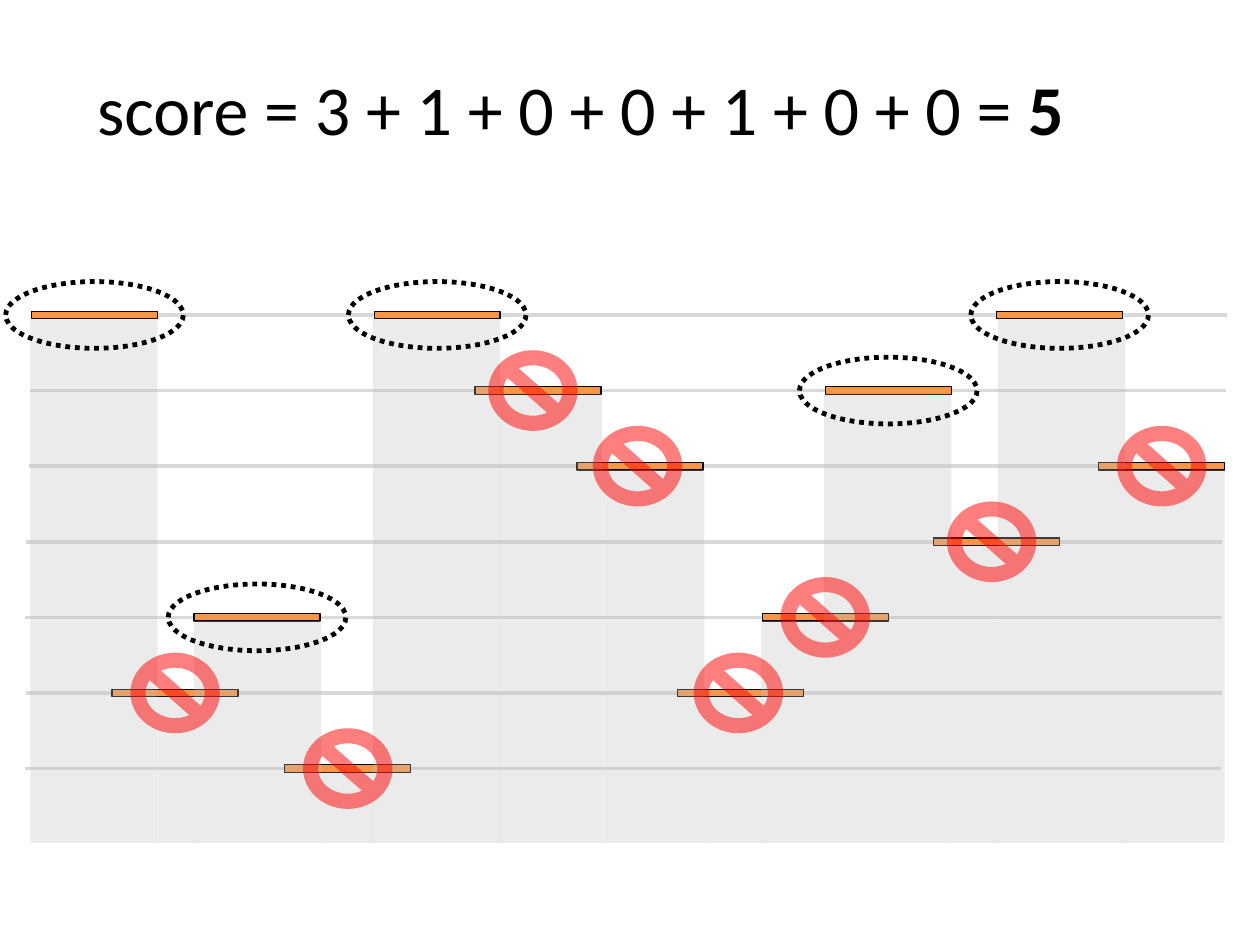
from dataclasses import dataclass
from itertools import pairwise

from lxml import etree
from pptx import Presentation
from pptx.dml.color import RGBColor
from pptx.enum.dml import MSO_LINE
from pptx.enum.shapes import MSO_CONNECTOR, MSO_SHAPE
from pptx.enum.text import MSO_ANCHOR, MSO_AUTO_SIZE, PP_ALIGN
from pptx.oxml.ns import qn
from pptx.util import Inches, Pt

STRAIGHT = MSO_CONNECTOR.STRAIGHT
RECTANGLE, OVAL, NO_SYMBOL = MSO_SHAPE.RECTANGLE, MSO_SHAPE.OVAL, MSO_SHAPE.NO_SYMBOL
DOTTED = MSO_LINE.ROUND_DOT
TITLE_ONLY = 5


@dataclass(frozen=True)
class Theme:
    font: str = "Calibri"
    title_size: float = 40
    ink: str = "000000"
    guide: str = "D9D9D9"
    bar: str = "F79646"
    shade: str = "BFBFBF"
    rejected: str = "FF0000"
    guide_width: float = 2
    bar_outline: float = 0.75
    ring_width: float = 2.75


@dataclass(frozen=True)
class Box:
    left: float
    top: float
    width: float
    height: float

    def inches(self):
        return [Inches(n) for n in (self.left, self.top, self.width, self.height)]


THEME = Theme()
TITLE_BOX = Box(0.67, 0.47, 9, 1.25)
CHART_BOX = Box(0.2, 2.5, 9.52, 4.19)

LEVEL_STEP = 0.6
GUIDE_LENGTH = 9.49
BAR_WIDTH, BAR_HEIGHT = 1, 0.06
RING_SIZE = (1.41, 0.53)
SIGN_SIZE = (0.71, 0.64)

# Offsets and edges are measured from the left side of the chart box.
GUIDE_OFFSETS = [0.05, 0.04, 0.03, 0.01, 0, 0.01, 0]
SKYLINE_EDGES = [0.04, 1.05, 1.34, 2.35, 2.76, 3.77, 4.58,
                 5.39, 5.84, 6.34, 7.35, 7.72, 8.73, 9.52]
SKYLINE_LEVELS = [0, 5, 4, 6, 0, 1, 2, 5, 4, 1, 3, 0, 2]
KEPT_BARS = [(0.05, 0), (2.77, 0), (7.71, 0), (6.35, 1), (1.34, 4)]
# Left, level and sideways shift of the sign from the bar's centre.
REJECTED_BARS = [(3.57, 1, -0.04), (8.52, 2, 0), (4.38, 2, -0.02), (7.21, 3, -0.04),
                 (5.85, 4, 0), (0.69, 5, 0), (5.18, 5, -0.02), (2.06, 6, 0)]


def color(value):
    return RGBColor.from_string(value)


def add_shape(page, kind, box, fill=None, alpha=None, line=None, width=0):
    shape = page.shapes.add_shape(kind, *box.inches())
    shape.shadow.inherit = False
    if fill:
        shape.fill.solid()
        shape.fill.fore_color.rgb = color(fill)
    else:
        shape.fill.background()
    if alpha is not None:
        tone = shape.fill._xPr.find(qn("a:solidFill"))[0]
        etree.SubElement(tone, qn("a:alpha"), val=str(alpha * 1000))
    if line:
        shape.line.color.rgb = color(line)
        shape.line.width = Pt(width)
    else:
        shape.line.fill.background()
    return shape


def centered(x, y, size):
    width, height = size
    return Box(x - width / 2, y - height / 2, width, height)


def level_y(box, level):
    return box.top + level * LEVEL_STEP


def write_score(page, box):
    title = page.shapes.title
    title.left, title.top, title.width, title.height = box.inches()
    frame = title.text_frame
    frame.word_wrap = True
    frame.auto_size = MSO_AUTO_SIZE.NONE
    frame.vertical_anchor = MSO_ANCHOR.TOP
    para = frame.paragraphs[0]
    para.alignment = PP_ALIGN.LEFT
    for text, bold in (("score = 3 + 1 + 0 + 0 + 1 + 0 + 0 = ", False), ("5", True)):
        span = para.add_run()
        span.text = text
        span.font.name = THEME.font
        span.font.size = Pt(THEME.title_size)
        span.font.bold = bold
        span.font.color.rgb = color(THEME.ink)


def draw_guides(page, box):
    for level, offset in enumerate(GUIDE_OFFSETS):
        left, y = box.left + offset, Inches(level_y(box, level))
        guide = page.shapes.add_connector(
            STRAIGHT, Inches(left), y, Inches(left + GUIDE_LENGTH), y)
        guide.line.color.rgb = color(THEME.guide)
        guide.line.width = Pt(THEME.guide_width)
        etree.SubElement(guide._element.spPr, qn("a:effectLst"))


def draw_bars(page, box):
    for left, level, *_ in KEPT_BARS + REJECTED_BARS:
        place = Box(box.left + left, level_y(box, level) - BAR_HEIGHT / 2,
                    BAR_WIDTH, BAR_HEIGHT)
        add_shape(page, RECTANGLE, place, THEME.bar,
                  line=THEME.ink, width=THEME.bar_outline)


def draw_skyline(page, box):
    """Shade the area from the highest visible bar down to the box bottom."""
    bottom = box.top + box.height
    for (left, right), level in zip(pairwise(SKYLINE_EDGES), SKYLINE_LEVELS):
        top = level_y(box, level) + BAR_HEIGHT / 2
        place = Box(box.left + left, top, right - left, bottom - top)
        add_shape(page, RECTANGLE, place, THEME.shade, alpha=30)


def draw_marks(page, box):
    """Ring the kept bars and put a no-entry sign on the rejected ones."""
    middle = box.left + BAR_WIDTH / 2
    for left, level in KEPT_BARS:
        place = centered(middle + left, level_y(box, level), RING_SIZE)
        ring = add_shape(page, OVAL, place, line=THEME.ink, width=THEME.ring_width)
        ring.line.dash_style = DOTTED
    for left, level, shift in REJECTED_BARS:
        place = centered(middle + left + shift, level_y(box, level), SIGN_SIZE)
        add_shape(page, NO_SYMBOL, place, THEME.rejected, alpha=50)


def build_score_slide(deck):
    page = deck.slides.add_slide(deck.slide_layouts[TITLE_ONLY])
    write_score(page, TITLE_BOX)
    for draw in (draw_guides, draw_bars, draw_skyline, draw_marks):
        draw(page, CHART_BOX)


def main():
    deck = Presentation()
    deck.slide_width, deck.slide_height = Inches(10), Inches(7.5)
    build_score_slide(deck)
    deck.save("out.pptx")


if __name__ == "__main__":
    main()
